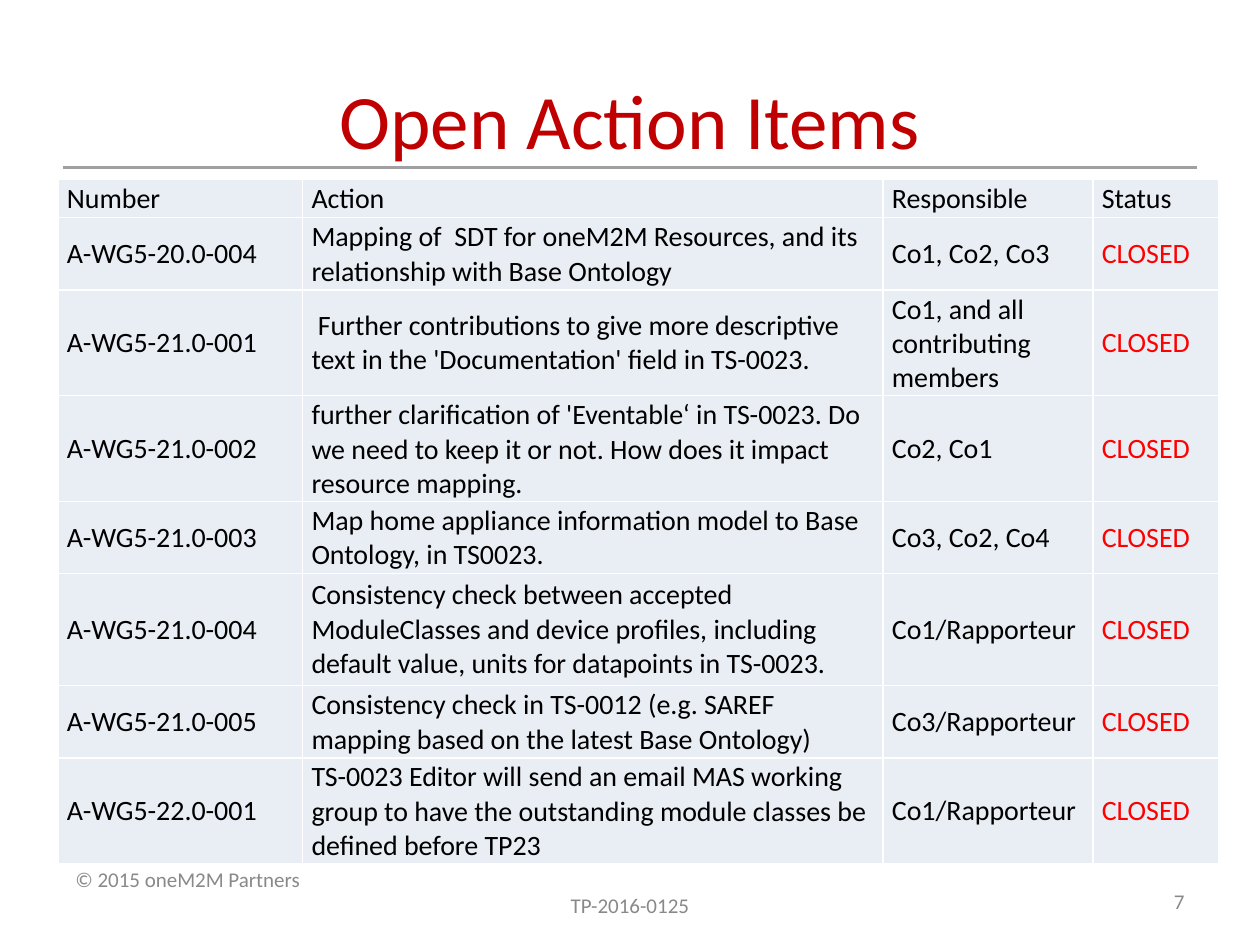
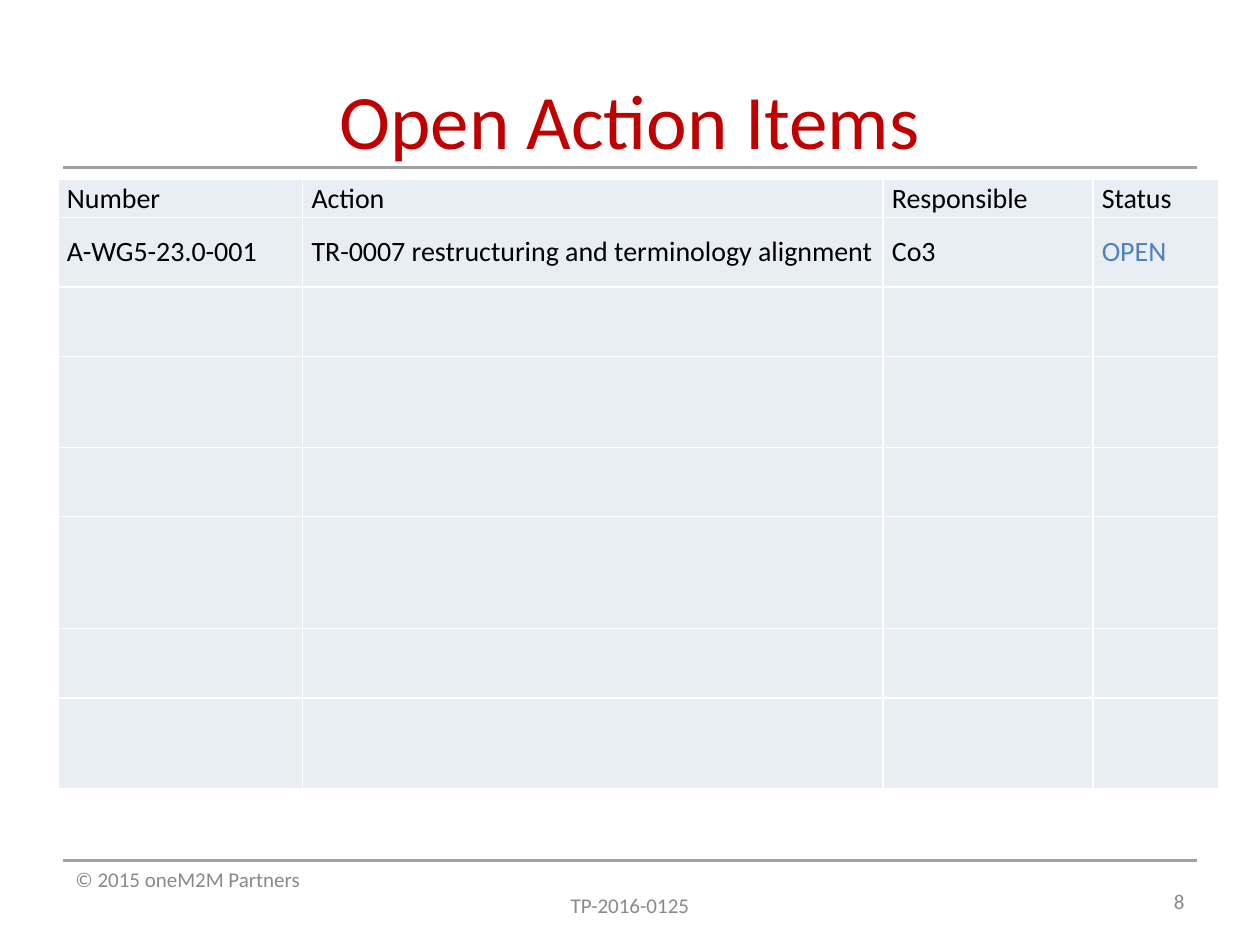
from dataclasses import dataclass
from typing import NamedTuple

from lxml.etree import SubElement
from pptx import Presentation
from pptx.dml.color import RGBColor
from pptx.enum.shapes import MSO_CONNECTOR
from pptx.enum.text import MSO_ANCHOR as Anchor, PP_ALIGN as Align
from pptx.oxml import parse_xml
from pptx.oxml.ns import nsdecls, qn
from pptx.slide import Slide
from pptx.table import _Cell as Cell
from pptx.util import Cm, Pt


@dataclass(frozen=True)
class Theme:
    font: str = "Calibri"
    title: str = "C00000"
    rule: str = "A0A0A3"
    footer: str = "898989"
    body: str = "000000"
    closed: str = "FF0000"
    open: str = "4F81BD"
    cell: str = "E9EDF4"
    border: str = "FFFFFF"
    title_size: int = 44
    body_size: int = 16
    footer_size: int = 12
    rule_width: float = 1.75
    border_width: float = 1


class TextLine(NamedTuple):
    text: str
    size: int
    color: str
    align: Align = Align.LEFT


class TextBox(NamedTuple):
    left: float
    top: float
    width: float
    height: float
    lines: list[TextLine]
    frame_format: dict = {}


class ActionItem(NamedTuple):
    number: str
    action: str
    responsible: str
    status: str


class ActionPage(NamedTuple):
    number: int
    items: list[ActionItem]


THEME = Theme()
STATUS_COLORS = {"CLOSED": THEME.closed, "OPEN": THEME.open}

# Page geometry in centimetres
PAGE_WIDTH, PAGE_HEIGHT = 25.4, 19.05
MARGIN = 1.27
CONTENT_WIDTH = PAGE_WIDTH - 2 * MARGIN
TITLE_RULE, FOOTER_RULE = 3.38, 17.35
TABLE_LEFT, TABLE_TOP = 1.17, 3.61
COLUMN_WIDTHS = [4.93, 11.7, 4.23, 2.54]
ROW_HEIGHTS = [0.58, 1.4, 1.4, 1.83, 1.4, 2.26, 1.4, 1.83]
CELL_MARGINS = {
    "margin_left": Cm(0.18), "margin_right": Cm(0.18),
    "margin_top": Cm(0.05), "margin_bottom": Cm(0.05),
}

# Content
HEADER = ActionItem("Number", "Action", "Responsible", "Status")
PAGES = [
    ActionPage(7, [
        ActionItem("A-WG5-20.0-004",
                   "Mapping of  SDT for oneM2M Resources, and its relationship with Base Ontology",
                   "Co1, Co2, Co3", "CLOSED"),
        ActionItem("A-WG5-21.0-001",
                   " Further contributions to give more descriptive text in the "
                   "'Documentation' field in TS-0023.",
                   "Co1, and all contributing members", "CLOSED"),
        ActionItem("A-WG5-21.0-002",
                   "further clarification of 'Eventable‘ in TS-0023. Do we need to keep it "
                   "or not. How does it impact resource mapping.",
                   "Co2, Co1", "CLOSED"),
        ActionItem("A-WG5-21.0-003",
                   "Map home appliance information model to Base Ontology, in TS0023.",
                   "Co3, Co2, Co4", "CLOSED"),
        ActionItem("A-WG5-21.0-004",
                   "Consistency check between accepted ModuleClasses and device profiles, "
                   "including default value, units for datapoints in TS-0023.",
                   "Co1/Rapporteur", "CLOSED"),
        ActionItem("A-WG5-21.0-005",
                   "Consistency check in TS-0012 (e.g. SAREF mapping based on the latest "
                   "Base Ontology)",
                   "Co3/Rapporteur", "CLOSED"),
        ActionItem("A-WG5-22.0-001",
                   "TS-0023 Editor will send an email MAS working group to have the "
                   "outstanding module classes be defined before TP23",
                   "Co1/Rapporteur", "CLOSED"),
    ]),
    ActionPage(8, [
        ActionItem("A-WG5-23.0-001", "TR-0007 restructuring and terminology alignment",
                   "Co3", "OPEN"),
    ]),
]


def set_format(target: object, values: dict) -> None:
    for name, value in values.items():
        setattr(target, name, value)


def write_line(paragraph, line: TextLine) -> None:
    paragraph.alignment = line.align
    run = paragraph.add_run()
    run.text = line.text
    set_format(run.font, {"name": THEME.font, "size": Pt(line.size)})
    run.font.color.rgb = RGBColor.from_string(line.color)


def add_text(slide: Slide, box: TextBox) -> None:
    shape = slide.shapes.add_textbox(Cm(box.left), Cm(box.top), Cm(box.width), Cm(box.height))
    frame = shape.text_frame
    set_format(frame, {"word_wrap": True, **box.frame_format})
    for index, line in enumerate(box.lines):
        write_line(frame.add_paragraph() if index else frame.paragraphs[0], line)


def add_rule(slide: Slide, top: float) -> None:
    rule = slide.shapes.add_connector(MSO_CONNECTOR.STRAIGHT, Cm(MARGIN), Cm(top),
                                      Cm(PAGE_WIDTH - MARGIN), Cm(top))
    rule.line.color.rgb = RGBColor.from_string(THEME.rule)
    rule.line.width = Pt(THEME.rule_width)
    SubElement(rule._element.spPr, qn("a:effectLst"))


def style_cell(cell: Cell) -> None:
    cell.fill.solid()
    cell.fill.fore_color.rgb = RGBColor.from_string(THEME.cell)
    properties = cell._tc.get_or_add_tcPr()
    for index, side in enumerate("LRTB"):
        properties.insert(index, parse_xml(
            f'<a:ln{side} {nsdecls("a")} w="{Pt(THEME.border_width)}"><a:solidFill>'
            f'<a:srgbClr val="{THEME.border}"/></a:solidFill></a:ln{side}>'))


def add_action_table(slide: Slide, items: list[ActionItem]) -> None:
    frame = slide.shapes.add_table(len(ROW_HEIGHTS), len(COLUMN_WIDTHS),
                                   Cm(TABLE_LEFT), Cm(TABLE_TOP),
                                   Cm(sum(COLUMN_WIDTHS)), Cm(sum(ROW_HEIGHTS)))
    table = frame.table
    set_format(table, {"first_row": False, "horz_banding": False})
    for column, width in zip(table.columns, COLUMN_WIDTHS):
        column.width = Cm(width)
    for row, height in zip(table.rows, ROW_HEIGHTS):
        row.height = Cm(height)
    for cell in table.iter_cells():
        style_cell(cell)
    for row_index, item in enumerate([HEADER, *items]):
        anchor = Anchor.MIDDLE if row_index else Anchor.TOP
        for cell, text in zip(table.rows[row_index].cells, item):
            set_format(cell, {**CELL_MARGINS, "vertical_anchor": anchor})
            color = STATUS_COLORS.get(text, THEME.body)
            write_line(cell.text_frame.paragraphs[0], TextLine(text, THEME.body_size, color))


def add_page(presentation, page: ActionPage) -> None:
    slide = presentation.slides.add_slide(presentation.slide_layouts[6])

    # Rules and footer
    for top in (FOOTER_RULE, TITLE_RULE):
        add_rule(slide, top)
    footer_style = (THEME.footer_size, THEME.footer)
    add_text(slide, TextBox(MARGIN, FOOTER_RULE, CONTENT_WIDTH, 1.3, [
        TextLine("© 2015 oneM2M Partners", *footer_style),
        TextLine("TP-2016-0125", *footer_style, Align.CENTER)]))

    # Title and page number
    add_text(slide, TextBox(MARGIN, 1.27, CONTENT_WIDTH, 3.18, [
        TextLine("Open Action Items", THEME.title_size, THEME.title, Align.CENTER)],
        {"margin_top": Cm(0.2)}))
    add_text(slide, TextBox(18.21, 17.65, 5.92, 1.02, [
        TextLine(str(page.number), *footer_style, Align.RIGHT)],
        {"vertical_anchor": Anchor.MIDDLE}))

    # Action items
    add_action_table(slide, page.items)


def main() -> None:
    presentation = Presentation()
    set_format(presentation, {"slide_width": Cm(PAGE_WIDTH), "slide_height": Cm(PAGE_HEIGHT)})
    for page in PAGES:
        add_page(presentation, page)
    presentation.save("out.pptx")


if __name__ == "__main__":
    main()
